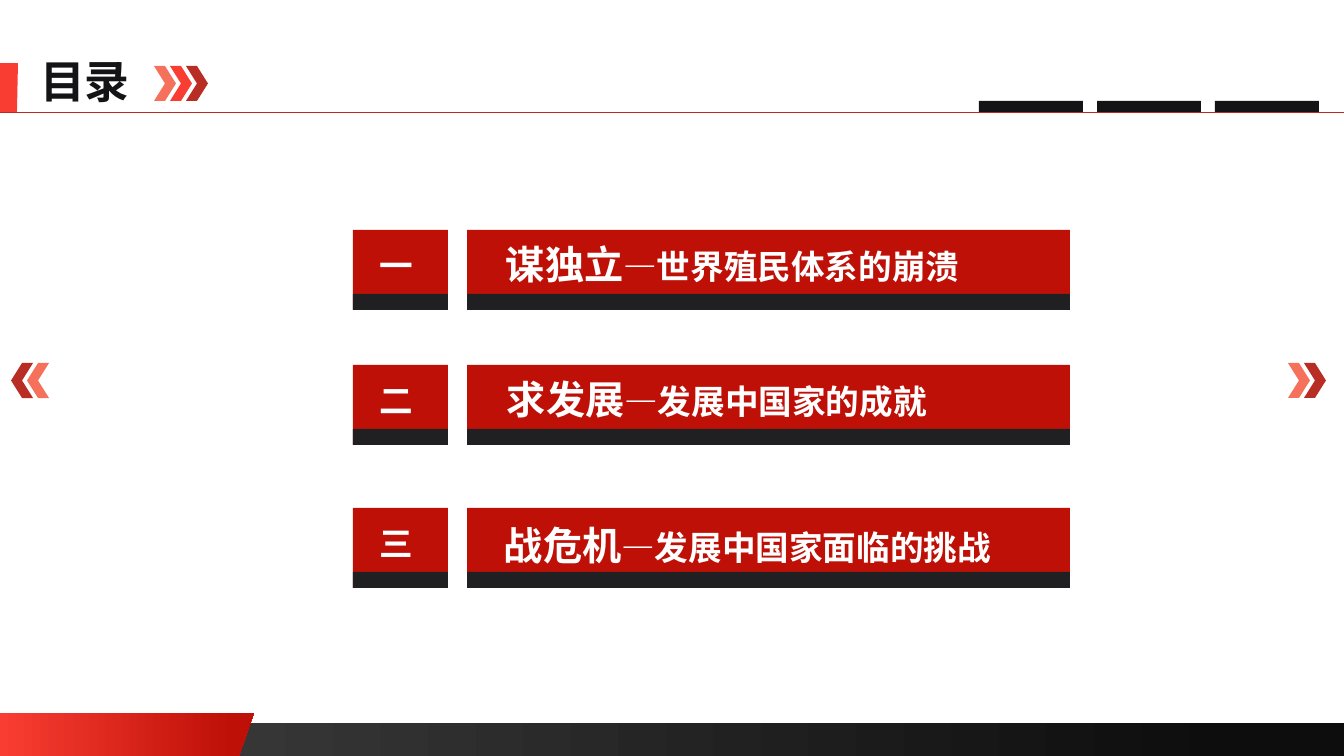
"""Build the contents slide with three numbered chapters."""
import pptx
import pptx.dml.color
import pptx.enum.shapes
import pptx.enum.text
import pptx.oxml.ns
import pptx.util
from lxml import etree

SCALE = 914400 / 100.8
FONT = "Noto Sans CJK SC"
SHAPES = pptx.enum.shapes.MSO_SHAPE
WHITE, INK, RED, DARK = "FFFFFF", "141316", "BE1007", "202022"
BRIGHT, CORAL, BRICK = "F93D32", "F5715B", "B82E24"


def paint(target, *colours):
    """Fill with one colour, or with a left-to-right gradient of two."""
    shades = [pptx.dml.color.RGBColor.from_string(colour) for colour in colours]
    target.shadow.inherit = False
    target.line.fill.background()
    if len(shades) == 1:
        target.fill.solid()
        target.fill.fore_color.rgb = shades[0]
    else:
        target.fill.gradient()
        target.fill.gradient_angle = 0
        for stop, shade, position in zip(target.fill.gradient_stops, shades, (0, 0.92)):
            stop.color.rgb = shade
            stop.position = position


def write(box, place, spans, colour, wrap=True):
    """Move a box and fill it with bold spans of (text, size)."""
    box.left, box.top, box.width, box.height = [round(n * SCALE) for n in place]
    frame = box.text_frame
    frame.word_wrap = wrap
    frame.auto_size = pptx.enum.text.MSO_AUTO_SIZE.NONE
    frame.vertical_anchor = pptx.enum.text.MSO_ANCHOR.TOP
    para = frame.paragraphs[0]
    para.alignment = pptx.enum.text.PP_ALIGN.LEFT
    para.font.name = FONT
    para.font.bold = True
    para.font.color.rgb = pptx.dml.color.RGBColor.from_string(colour)
    latin = para.font._element.find(pptx.oxml.ns.qn("a:latin"))
    east_asian = etree.Element(pptx.oxml.ns.qn("a:ea"), typeface=FONT)
    latin.addnext(east_asian)
    for text, size in spans:
        span = para.add_run()
        span.text = text
        span.font.size = pptx.util.Pt(size)


deck = pptx.Presentation()
deck.slide_width = round(1344 * SCALE)
deck.slide_height = round(756 * SCALE)
page = deck.slides.add_slide(deck.slide_layouts[5])
shapes = page.shapes

footer = shapes.add_shape(SHAPES.RECTANGLE, *[round(n * SCALE) for n in (0, 723, 1344, 33)])
paint(footer, "404040", "0D0D0D")

for corners, colours in (
    ([(0, 713), (254, 713), (239, 756), (0, 756)], (BRIGHT, RED)),
    ([(0, 63), (18, 63), (17, 112), (0, 112)], (BRIGHT,)),
):
    outline = shapes.build_freeform(*corners[0], scale=SCALE)
    outline.add_line_segments(corners[1:], close=True)
    paint(outline.convert_to_shape(), *colours)

write(shapes.title, (30, 49, 111, 65), [("目录", 32)], INK, wrap=False)

rule = shapes.add_connector(
    pptx.enum.shapes.MSO_CONNECTOR.STRAIGHT, 0, round(112 * SCALE), deck.slide_width, round(112 * SCALE)
)
rule.line.color.rgb = pptx.dml.color.RGBColor.from_string(BRICK)
rule.line.width = pptx.util.Pt(0.5)
etree.SubElement(rule._element.spPr, pptx.oxml.ns.qn("a:effectLst"))

for left, top, step, turn, colours in (
    (154, 66, 16, 0, (CORAL, BRIGHT, BRICK)),
    (1288, 363, 16, 0, (CORAL, BRICK)),
    (27, 363, -16, 180, (CORAL, BRICK)),
):
    for index, colour in enumerate(colours):
        place = (left + index * step, top, 22, 35)
        chevron = shapes.add_shape(SHAPES.CHEVRON, *[round(n * SCALE) for n in place])
        chevron.rotation = turn
        paint(chevron, colour)

for index in range(3):
    place = (979 + index * 118, 101, 104, 11)
    tab = shapes.add_shape(SHAPES.RECTANGLE, *[round(n * SCALE) for n in place])
    paint(tab, INK)

chapters = (
    (230, "一", "谋独立", "—世界殖民体系的崩溃", 496, 235),
    (365, "二", "求发展", "—发展中国家的成就", 497, 370),
    (508, "三", "战危机", "—发展中国家面临的挑战", 494, 516),
)
for top, number, heading, detail, text_left, text_top in chapters:
    for offset, height, colour in ((0, 80, RED), (64, 16, DARK)):
        for left, width in ((353, 95), (467, 603)):
            place = (left, top + offset, width, height)
            bar = shapes.add_shape(SHAPES.RECTANGLE, *[round(n * SCALE) for n in place])
            paint(bar, colour)
    write(shapes.add_textbox(0, 0, 0, 0), (370, top + 10, 58, 50), [(number, 24)], WHITE)
    spans = [(heading, 28), (detail, 24)]
    write(shapes.add_textbox(0, 0, 0, 0), (text_left, text_top, 550, 57), spans, WHITE)

deck.save("out.pptx")
